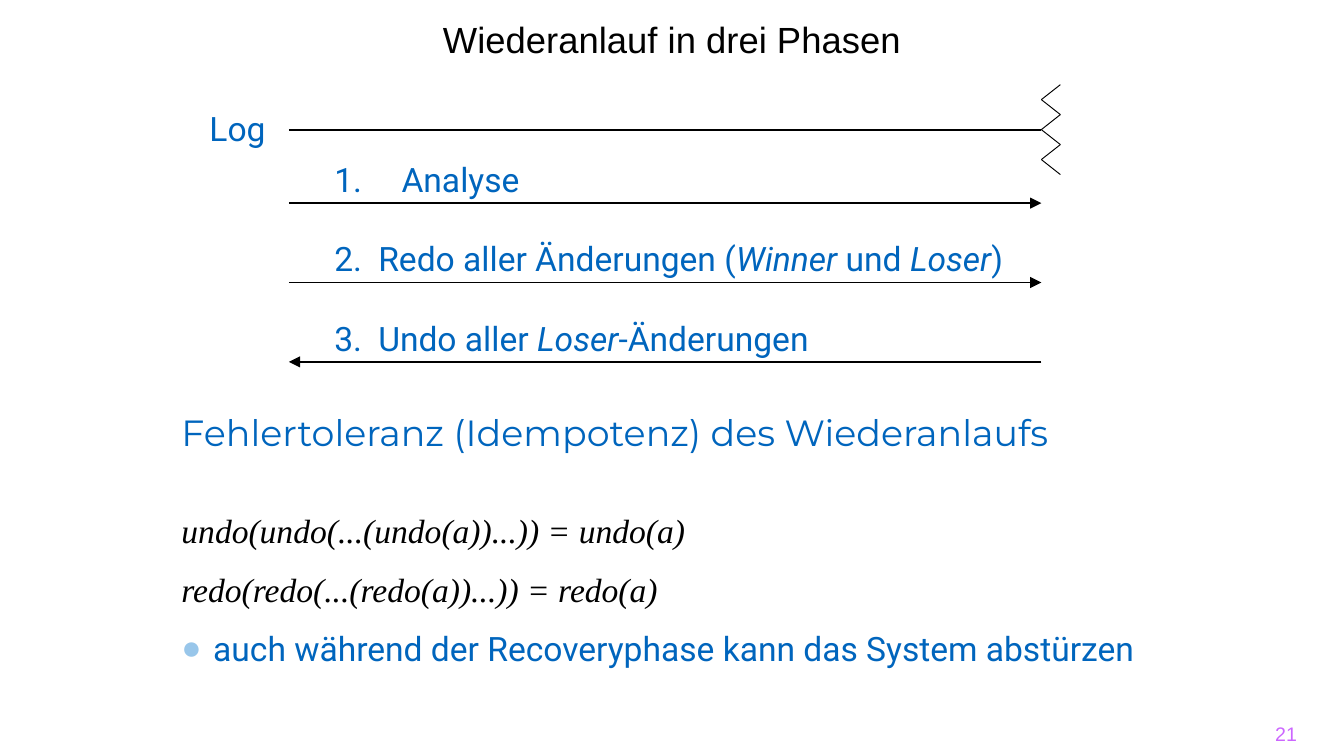
from lxml import etree
from pptx import Presentation
from pptx import util as u
from pptx.dml.color import RGBColor
from pptx.enum import shapes, text
from pptx.oxml.ns import qn

BLUE, BLACK = "0065BD", "000000"
LEFT, RIGHT = 5.46, 19.68  # ends of the log and the phase arrows
STEP = 1.5  # distance between phases

deck = Presentation()
deck.slide_width, deck.slide_height = u.Cm(25.4), u.Cm(14.29)
page = deck.slides.add_slide(deck.slide_layouts[6])


def add_text(left, top, width, height, paragraphs, anchor=text.MSO_ANCHOR.BOTTOM):
    """Each paragraph: parts (every second one italic), font, size, colour,
    hanging indent in cm and bullet elements as (tag, attributes)."""
    box = page.shapes.add_textbox(u.Cm(left), u.Cm(top), u.Cm(width), u.Cm(height))
    frame = box.text_frame
    frame.word_wrap = True
    frame.vertical_anchor = anchor
    for number, (parts, font, size, color, hang, bullet) in enumerate(paragraphs):
        para = frame.add_paragraph() if number else frame.paragraphs[0]
        if number:
            para.space_before = u.Pt(10)
        props = para._p.get_or_add_pPr()
        if hang:
            props.set("marL", str(u.Cm(hang)))
            props.set("indent", str(-u.Cm(hang)))
        for tag, attributes in bullet:
            element = etree.SubElement(props, qn(tag), attributes)
            if tag == "a:buClr":
                etree.SubElement(element, qn("a:srgbClr"), val="98C6EA")
        para.font.name, para.font.size = font, u.Pt(size)
        para.font.color.rgb = RGBColor.from_string(color)
        for index, part in enumerate(parts):
            if part:
                span = para.add_run()
                span.text = part
                if index % 2:
                    span.font.italic = True
    return frame


def add_line(x1, y1, x2, y2, width, arrow=False):
    line = page.shapes.add_connector(
        shapes.MSO_CONNECTOR.STRAIGHT, u.Cm(x1), u.Cm(y1), u.Cm(x2), u.Cm(y2))
    line.line.width = u.Pt(width)
    line.line.color.rgb = RGBColor.from_string(BLACK)
    if arrow:
        etree.SubElement(line.line._get_or_add_ln(), qn("a:tailEnd"), type="triangle")
    etree.SubElement(line._element.spPr, qn("a:effectLst"))


# Title
title = add_text(3.18, 0, 19.05, 1.57,
                 [(["Wiederanlauf in drei Phasen"], "Arial", 19.5, BLACK, 0, [])],
                 text.MSO_ANCHOR.TOP)
title.paragraphs[0].alignment = text.PP_ALIGN.CENTER
title.paragraphs[0].line_spacing = 1.25

# Log line with its torn end
add_text(3.71, 1.9, 1.75, 1.02, [(["Log"], "Roboto", 18, BLUE, 0, [])])
add_line(LEFT, 2.46, RIGHT, 2.46, 0.75)
tear = [(RIGHT if i % 2 else RIGHT + 0.36, 1.6 + i * 1.7 / 6) for i in range(7)]
for start, end in zip(tear, tear[1:]):
    add_line(*start, *end, 0.5)

# Three phases, the last one running backwards
phases = [
    (["Analyse"], 1.27, [("a:buFont", {"typeface": "+mj-lt"}),
                         ("a:buAutoNum", {"type": "arabicPeriod"})]),
    (["2.\tRedo aller Änderungen (", "Winner", " und ", "Loser", ")"], 0.83, []),
    (["3.\tUndo aller ", "Loser", "-Änderungen"], 0.83, []),
]
for row, (parts, hang, bullet) in enumerate(phases):
    add_text(6.07, 2.87 + row * STEP, 13.6, 1.02,
             [(parts, "Roboto", 18, BLUE, hang, bullet)])
    start, end = (RIGHT, LEFT) if row == 2 else (LEFT, RIGHT)
    y = 3.84 + row * STEP
    add_line(start, y, end, y, 0.75, arrow=True)

# Fault tolerance
add_text(3.18, 7.14, 19.05, 1.57,
         [(["Fehlertoleranz (Idempotenz) des Wiederanlaufs"],
           "Montserrat", 19.5, BLUE, 0, [])])
formulas = [(["", f"{name}({name}(...({name}(a))...)) = {name}(a)"],
             "Times New Roman", 18, BLACK, 0, []) for name in ("undo", "redo")]
remark = (["auch während der Recoveryphase kann das System abstürzen"],
          "Roboto", 18, BLUE, 0.6,
          [("a:buClr", {}), ("a:buFont", {"typeface": "Arial"}),
           ("a:buChar", {"char": "●"})])
add_text(3.18, 9.42, 19.05, 3.33, formulas + [remark])

# Page number
footer = add_text(18.82, 13.49, 5.69, 0.76,
                  [(["21"], "Arial", 10.5, "CC66FF", 0, [])], text.MSO_ANCHOR.MIDDLE)
footer.margin_left = footer.margin_right = 0
footer.paragraphs[0].alignment = text.PP_ALIGN.RIGHT

deck.save("out.pptx")
